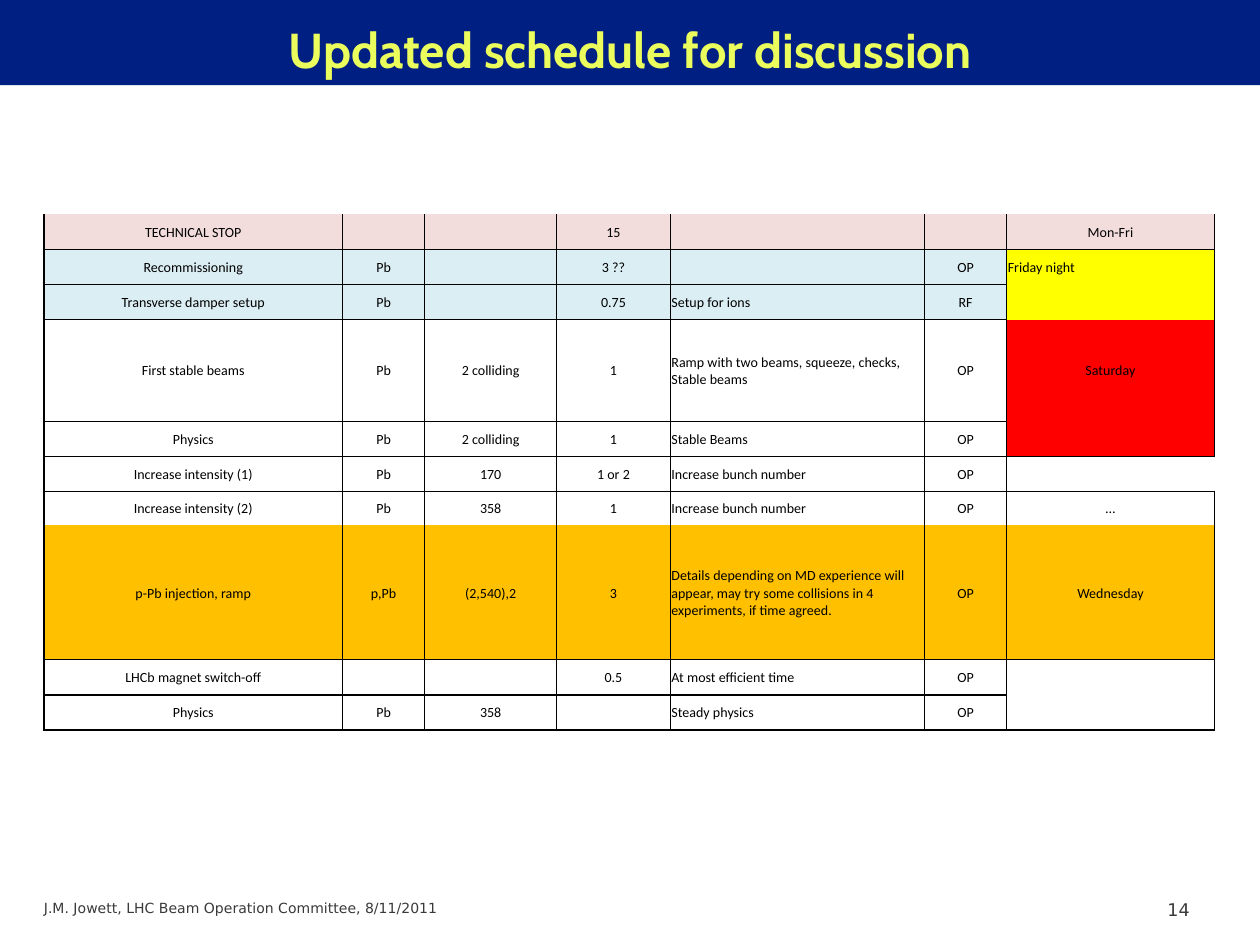
import pptx
import pptx.dml.color
import pptx.enum.text
import pptx.oxml.ns
import pptx.util
from lxml import etree

COLORS = {
    "navy": "001F82", "lemon": "EBFC5D", "grey": "393939", "black": "000000",
    "pink": "F2DDDC", "ice": "DBEEF3", "yellow": "FFFF00", "red": "FF0000",
    "amber": "FFC000", "white": "FFFFFF",
}
ALIGN = pptx.enum.text.PP_ALIGN
ANCHOR = pptx.enum.text.MSO_ANCHOR
SLIDE_WIDTH = pptx.util.Inches(10)
SLIDE_HEIGHT = pptx.util.Inches(7.5)
NO_STYLE = "{2D5ABB26-0587-4C30-8999-92F81FD0307C}"

COLUMN_WIDTHS = [2.37, 0.65, 1.05, 0.9, 2.02, 0.65, 1.65]
NOTE_COLUMN, DAY_COLUMN = 4, 6
# Each row: height, fill, fill of the day cell, texts
SCHEDULE = [
    (0.28, "pink", "pink", ["TECHNICAL STOP", "", "", "15", "", "", "Mon-Fri"]),
    (0.28, "ice", "yellow", ["Recommissioning", "Pb", "", "3 ??", "", "OP", "Friday night"]),
    (0.28, "ice", "yellow", ["Transverse damper setup", "Pb", "", "0.75", "Setup for ions", "RF", ""]),
    (0.81, None, "red", ["First stable beams", "Pb", "2 colliding", "1",
                         "Ramp with two beams, squeeze, checks, Stable beams", "OP", "Saturday"]),
    (0.28, None, "red", ["Physics", "Pb", "2 colliding", "1", "Stable Beams", "OP", ""]),
    (0.28, None, None, ["Increase intensity (1)", "Pb", "170", "1 or 2", "Increase bunch number", "OP", ""]),
    (0.27, None, None, ["Increase intensity (2)", "Pb", "358", "1", "Increase bunch number", "OP", "…"]),
    (1.07, "amber", "amber", ["p-Pb injection, ramp", "p,Pb", "(2,540),2", "3",
                              "Details depending on MD experience will appear, may try some "
                              "collisions in 4 experiments, if time agreed.", "OP", "Wednesday"]),
    (0.28, "white", None, ["LHCb magnet switch-off", "", "", "0.5", "At most efficient time", "OP", ""]),
    (0.28, None, None, ["Physics", "Pb", "358", "", "Steady physics", "OP", ""]),
]
# Rows with a rule below them, in the task columns and in the day column
TASK_RULES = {0, 1, 2, 3, 4, 5, 7, 8, 9}
DAY_RULES = {0, 4, 5, 7, 9}
OPEN_DAY_ROW = 5


def share_box(left, top, width, height):
    """Turn shares of the slide's size into lengths."""
    return (int(left * SLIDE_WIDTH), int(top * SLIDE_HEIGHT),
            int(width * SLIDE_WIDTH), int(height * SLIDE_HEIGHT))


def rgb(name):
    return pptx.dml.color.RGBColor.from_string(COLORS[name])


def write(text_frame, text, size, font, color, align, bold=False):
    text_frame.text = text
    text_frame.word_wrap = True
    paragraph = text_frame.paragraphs[0]
    paragraph.alignment = align
    for run in paragraph.runs:
        run.font.size = pptx.util.Pt(size)
        run.font.name = font
        run.font.bold = bold
        run.font.color.rgb = rgb(color)


def add_title(slide, box):
    title = slide.shapes.title
    title.left, title.top, title.width, title.height = box
    title.fill.solid()
    title.fill.fore_color.rgb = rgb("navy")
    title.text_frame.vertical_anchor = ANCHOR.BOTTOM
    write(title.text_frame, "Updated schedule for discussion", 28, "Cabin",
          "lemon", ALIGN.CENTER, bold=True)


def add_footer_text(slide, box, text, size, align):
    shape = slide.shapes.add_textbox(*box)
    write(shape.text_frame, text, size, "DejaVu Sans", "grey", align)


def draw_borders(cell, widths):
    """Draw left, right, top and bottom borders; a width of 0 hides one."""
    properties = cell._tc.get_or_add_tcPr()
    qualified = pptx.oxml.ns.qn
    for side, width in zip("LRTB", widths):
        line = etree.SubElement(properties, qualified(f"a:ln{side}"),
                                w=str(int(pptx.util.Pt(width))))
        if width:
            fill = etree.SubElement(line, qualified("a:solidFill"))
            etree.SubElement(fill, qualified("a:srgbClr"), val=COLORS["black"])
        else:
            etree.SubElement(line, qualified("a:noFill"))


def border_widths(row, column):
    is_day = column == DAY_COLUMN
    rules = DAY_RULES if is_day else TASK_RULES
    left = 1 if column in (0, DAY_COLUMN) else 0.5
    right = 1 if column >= DAY_COLUMN - 1 else 0.5
    if is_day and row == OPEN_DAY_ROW:
        right = 0
    return left, right, int(row - 1 in rules), int(row in rules)


def format_cell(cell, text, fill, borders, align):
    cell.margin_left = cell.margin_right = cell.margin_top = pptx.util.Inches(0.01)
    cell.margin_bottom = 0
    cell.vertical_anchor = ANCHOR.MIDDLE
    write(cell.text_frame, text, 8, "Calibri", "black", align)
    if not text:
        # Keeps an empty cell from stretching its row
        etree.SubElement(cell.text_frame.paragraphs[0]._p,
                         pptx.oxml.ns.qn("a:endParaRPr"), sz="800")
    draw_borders(cell, borders)
    if fill:
        cell.fill.solid()
        cell.fill.fore_color.rgb = rgb(fill)
    else:
        cell.fill.background()


def add_schedule(slide, box):
    table = slide.shapes.add_table(len(SCHEDULE), len(COLUMN_WIDTHS), *box).table
    table.first_row = table.horz_banding = False
    table._tbl.tblPr.find(pptx.oxml.ns.qn("a:tableStyleId")).text = NO_STYLE
    column_scale = box[2] / sum(COLUMN_WIDTHS)
    row_scale = box[3] / sum(entry[0] for entry in SCHEDULE)
    for column, width in zip(table.columns, COLUMN_WIDTHS):
        column.width = int(width * column_scale)
    for row, (height, task_fill, day_fill, texts) in enumerate(SCHEDULE):
        table.rows[row].height = int(height * row_scale)
        for column, text in enumerate(texts):
            fill = day_fill if column == DAY_COLUMN else task_fill
            is_left = column == NOTE_COLUMN or text == "Friday night"
            format_cell(table.cell(row, column), text, fill, border_widths(row, column),
                        ALIGN.LEFT if is_left else ALIGN.CENTER)


def main():
    presentation = pptx.Presentation()
    presentation.slide_width, presentation.slide_height = SLIDE_WIDTH, SLIDE_HEIGHT
    slide = presentation.slides.add_slide(presentation.slide_layouts[5])
    add_title(slide, share_box(0, 0, 1, 0.09))
    add_footer_text(slide, share_box(0.025, 0.945, 0.475, 0.033),
                    "J.M. Jowett, LHC Beam Operation Committee, 8/11/2011", 8, ALIGN.LEFT)
    add_footer_text(slide, share_box(0.746, 0.945, 0.208, 0.033), "14", 10, ALIGN.RIGHT)
    add_schedule(slide, share_box(0.035, 0.2267, 0.929, 0.546))
    presentation.save("out.pptx")


if __name__ == "__main__":
    main()
